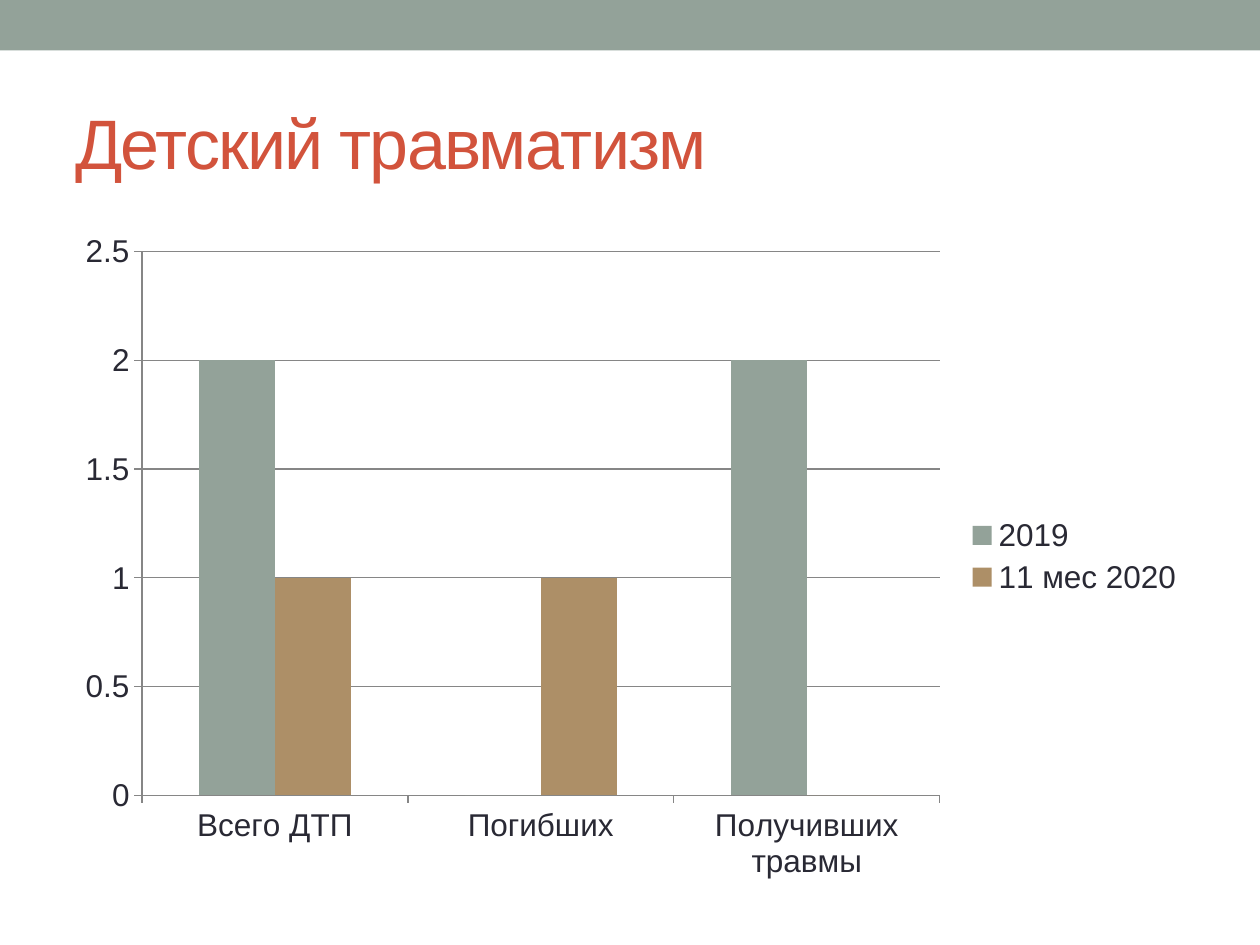
"""Build the child injury slide with its clustered column chart."""
from pptx import Presentation
from pptx.chart.data import CategoryChartData
from pptx.dml.color import RGBColor
from pptx.enum import chart as chart_enum, shapes, text
from pptx.util import Inches, Pt

FONT = "Arial"
GREEN, RED, DARK, GRID = "93A299", "D2533C", "292934", "868686"
TITLE = "Детский травматизм"
CATEGORIES = ["Всего ДТП", "Погибших", "Получивших травмы"]
SERIES = [
    ("2019", (2, 0, 2), GREEN),
    ("11 мес 2020", (1, 1, 0), "AD8F67"),
]


def paint(fill, color):
    fill.solid()
    fill.fore_color.rgb = RGBColor.from_string(color)


def style_font(font, size, color):
    font.name = FONT
    font.size = Pt(size)
    font.color.rgb = RGBColor.from_string(color)


def style_line(line):
    paint(line.fill, GRID)
    line.width = Pt(0.75)


def add_band(slide):
    band = slide.shapes.add_shape(
        shapes.MSO_SHAPE.RECTANGLE, 0, 0, Inches(10), Inches(0.4))
    band.shadow.inherit = False
    paint(band.fill, GREEN)
    band.line.fill.background()


def add_title(slide):
    box = slide.shapes.add_textbox(
        Inches(0.5), Inches(0.58), Inches(9), Inches(1.08))
    frame = box.text_frame
    frame.word_wrap = True
    frame.vertical_anchor = text.MSO_ANCHOR.MIDDLE
    frame.text = TITLE
    run = frame.paragraphs[0].runs[0]
    style_font(run.font, 40, RED)
    run.font._element.set("spc", "-100")


def add_column_chart(slide):
    data = CategoryChartData(number_format="General")
    data.categories = CATEGORIES
    for name, values, _ in SERIES:
        data.add_series(name, values)
    chart = slide.shapes.add_chart(
        chart_enum.XL_CHART_TYPE.COLUMN_CLUSTERED,
        Inches(0.5), Inches(1.75), Inches(9), Inches(5.33), data).chart
    style_font(chart.font, 18, DARK)
    chart.has_title = False
    chart.has_legend = True
    chart.legend.position = chart_enum.XL_LEGEND_POSITION.RIGHT
    chart.legend.include_in_layout = False

    plot = chart.plots[0]
    plot.gap_width = 150
    plot.overlap = 0
    plot.vary_by_categories = False
    for series, (_, _, color) in zip(plot.series, SERIES):
        paint(series.format.fill, color)
        series.invert_if_negative = False

    for axis in (chart.category_axis, chart.value_axis):
        axis.major_tick_mark = chart_enum.XL_TICK_MARK.OUTSIDE
        style_line(axis.format.line)
    value_axis = chart.value_axis
    value_axis.minimum_scale = 0
    value_axis.maximum_scale = 2.5
    value_axis.major_unit = 0.5
    value_axis.has_major_gridlines = True
    style_line(value_axis.major_gridlines.format.line)


def main():
    presentation = Presentation()
    presentation.slide_width = Inches(10)
    presentation.slide_height = Inches(7.5)
    slide = presentation.slides.add_slide(presentation.slide_layouts[6])
    paint(slide.background.fill, "FFFFFF")
    add_band(slide)
    add_title(slide)
    add_column_chart(slide)
    presentation.save("out.pptx")


if __name__ == "__main__":
    main()
